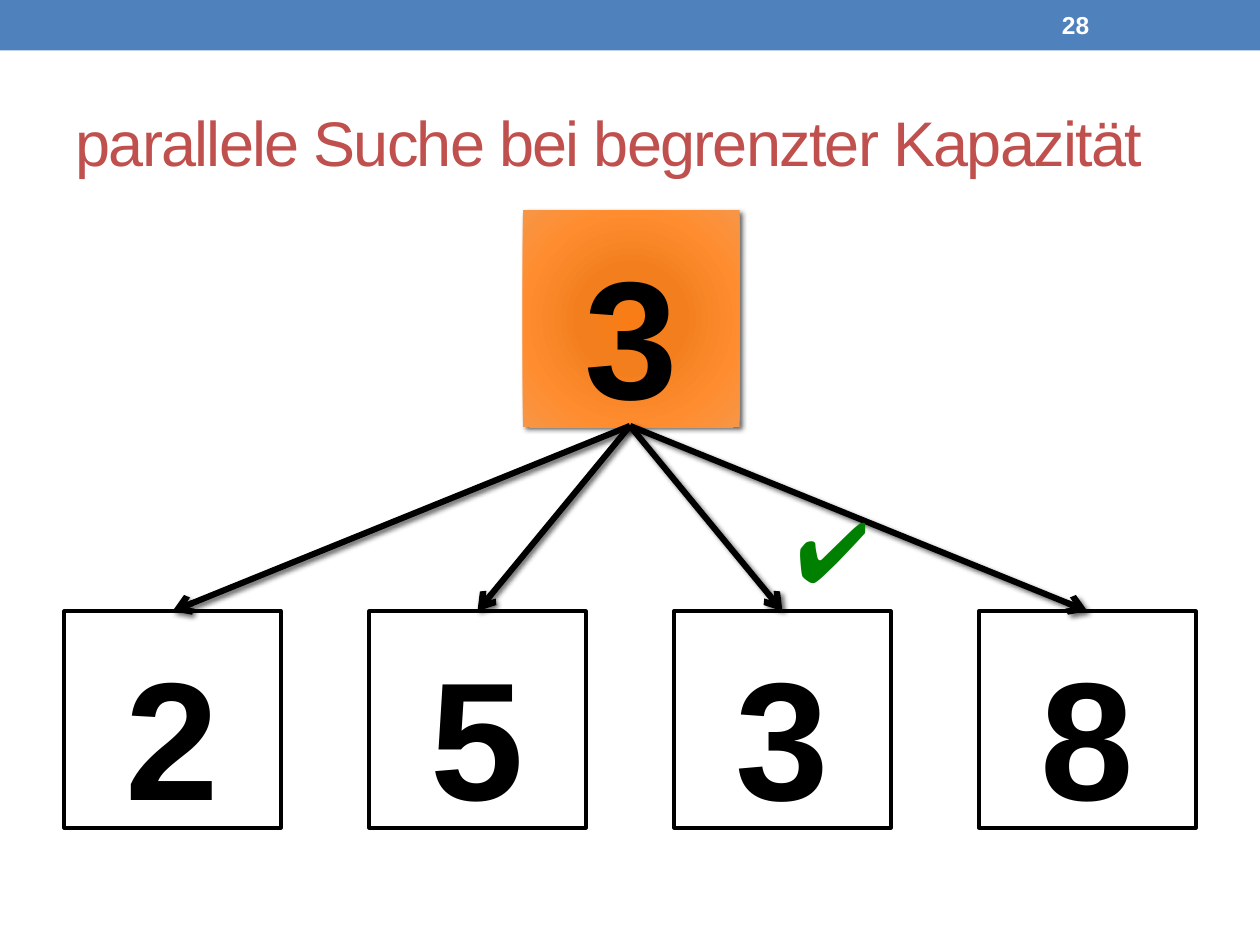
"""Build a slide showing a parallel search for one number among four."""
from lxml import etree
from pptx import Presentation
from pptx.dml.color import RGBColor as RGB
from pptx.enum.shapes import MSO_CONNECTOR as CONN, MSO_SHAPE as SHAPE
from pptx.enum.text import MSO_ANCHOR as ANCHOR, PP_ALIGN as ALIGN
from pptx.oxml import parse_xml
from pptx.oxml.ns import nsdecls, qn
from pptx.util import Inches, Pt

COLORS = {"bar": "4F81BD", "title": "C0504D", "white": "FFFFFF", "black": "000000", "check": "008000"}
GRADIENT = {0: "F97D16", 34: "F27E1E", 70: "FF8D30", 100: "F79646"}
SHADOW = (
    f'<a:effectLst {nsdecls("a")}><a:outerShdw blurRad="38100" dist="25400" dir="2700000" rotWithShape="0">'
    '<a:srgbClr val="000000"><a:alpha val="60000"/></a:srgbClr></a:outerShdw></a:effectLst>'
)


def write(sp, text, color, size, bold=False, align=ALIGN.LEFT, **frame):
    tf = sp.text_frame
    for name, value in frame.items():
        setattr(tf, name, value)
    p = tf.paragraphs[0]
    p.alignment = align
    r = p.add_run()
    r.text = text
    for name, value in {"name": "Arial", "size": Pt(size), "bold": bold}.items():
        setattr(r.font, name, value)
    r.font.color.rgb = RGB.from_string(COLORS[color])
    return r


def add_box(left, top, width, height, fill):
    sp = s.shapes.add_shape(SHAPE.RECTANGLE, *map(Inches, (left, top, width, height)))
    sp.shadow.inherit = False
    sp.fill.solid()
    sp.fill.fore_color.rgb = RGB.from_string(COLORS[fill])
    sp.line.fill.background()
    return sp


prs = Presentation()
prs.slide_width, prs.slide_height = Inches(10), Inches(7.5)
s = prs.slides.add_slide(prs.slide_layouts[5])

add_box(0, 0, 10, 0.4, "bar")

title = s.shapes.title
for name, value in {"left": 0.5, "top": 0.58, "width": 9, "height": 1.08}.items():
    setattr(title, name, Inches(value))
r = write(title, "parallele Suche bei begrenzter Kapazität", "title", 36,
          vertical_anchor=ANCHOR.MIDDLE, word_wrap=True)
r.font._element.set("spc", "-100")

number = s.shapes.add_textbox(*map(Inches, (8.33, 0.02, 1.17, 0.36)))
write(number, "28", "white", 14, True, vertical_anchor=ANCHOR.MIDDLE, word_wrap=True)

digit = {"color": "black", "size": 96, "bold": True, "align": ALIGN.CENTER, "word_wrap": True,
         "vertical_anchor": ANCHOR.TOP, "margin_top": Inches(0.17), "margin_bottom": 0}
side, row_top = 1.72, 4.85
centers = [1.37 + 2.42 * i for i in range(4)]
for center, value in zip(centers, "2538"):
    sp = add_box(center - side / 2, row_top, side, side, "white")
    sp.line.color.rgb = RGB.from_string(COLORS["black"])
    sp.line.width = Pt(2.08)
    write(sp, value, **digit)

root = add_box(4.15, 1.67, side, side, "white")
write(root, "3", **digit)
stops = "".join(f'<a:gs pos="{pos * 1000}"><a:srgbClr val="{c}"/></a:gs>' for pos, c in GRADIENT.items())
gradient = parse_xml(
    f'<a:gradFill {nsdecls("a")} rotWithShape="1"><a:gsLst>{stops}</a:gsLst><a:path path="circle">'
    '<a:fillToRect l="50000" t="50000" r="50000" b="50000"/></a:path></a:gradFill>'
)
props = root._element.spPr
props.replace(props.find(qn("a:solidFill")), gradient)
props.replace(props.find(qn("a:effectLst")), parse_xml(SHADOW))

for center in centers:
    arrow = s.shapes.add_connector(CONN.STRAIGHT, *map(Inches, (5, 3.38, center, row_top)))
    arrow.line.color.rgb = RGB.from_string(COLORS["black"])
    arrow.line.width = Pt(3.5)
    etree.SubElement(arrow.line._get_or_add_ln(), qn("a:tailEnd"), type="arrow")
    arrow._element.spPr.append(parse_xml(SHADOW))

check = s.shapes.add_textbox(*map(Inches, (6.22, 3.91, 0.77, 0.91)))
write(check, "✔", "check", 48, word_wrap=False)

prs.save("out.pptx")
